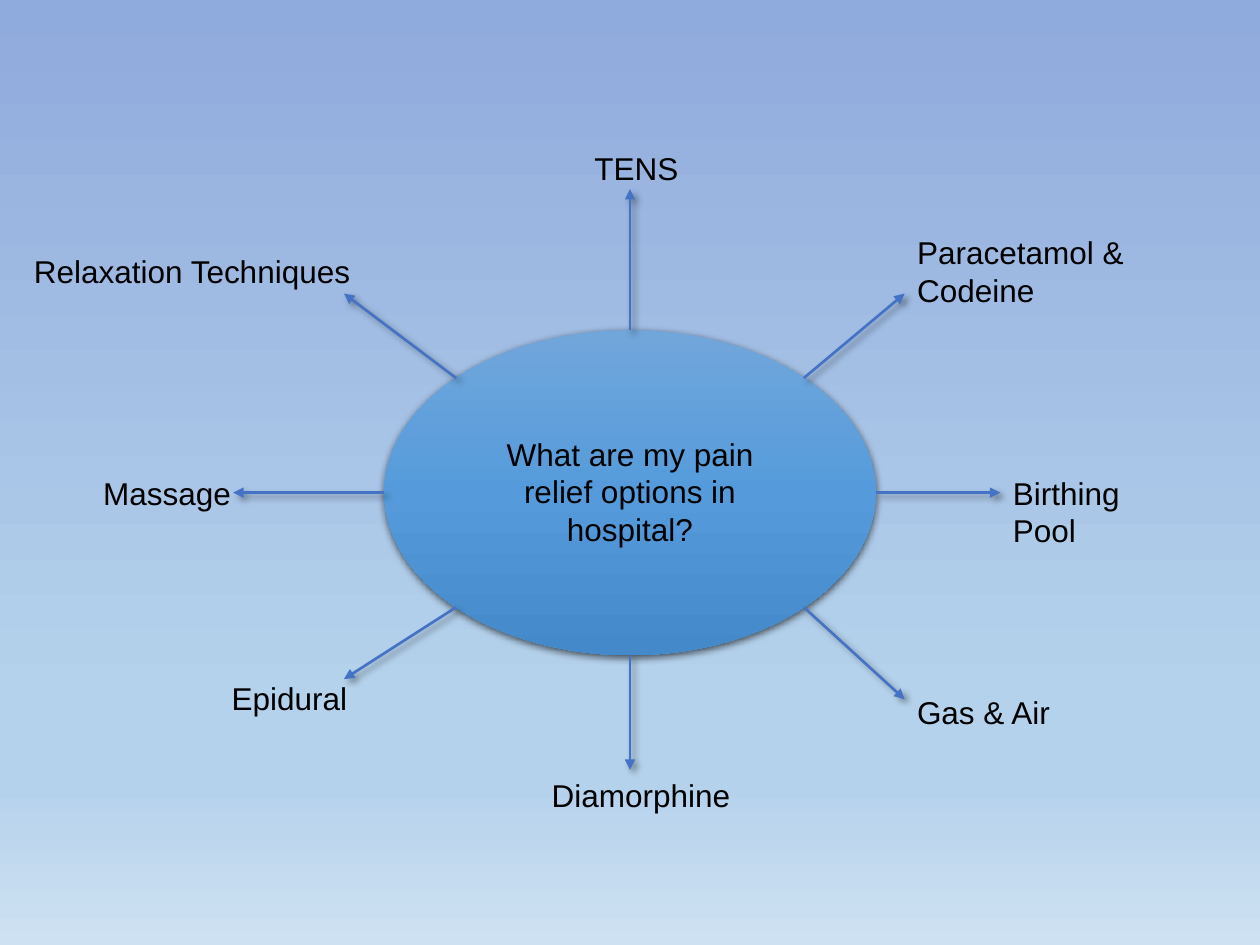
from lxml import etree
from pptx import Presentation
from pptx import util as u
from pptx.dml.color import RGBColor
from pptx.enum import shapes, text
from pptx.oxml.ns import qn

BLACK = RGBColor(0x00, 0x00, 0x00)
BLUE = RGBColor(0x44, 0x72, 0xC4)
SKY = [(0, RGBColor(0x8F, 0xAA, 0xDC)), (74, RGBColor(0xB5, 0xD2, 0xEC)),
       (83, RGBColor(0xB5, 0xD2, 0xEC)), (100, RGBColor(0xCE, 0xE1, 0xF2))]
HUB = [(0, RGBColor(0x71, 0xA6, 0xDB)), (50, RGBColor(0x55, 0x9B, 0xDB)),
       (100, RGBColor(0x44, 0x8A, 0xCA))]

WIDE, HIGH = 10, 7.5
LEFT, MID, RIGHT = 3.05, 5, 6.95      # columns of the ellipse
TOP, AXIS, BASE = 2.62, 3.91, 5.2     # rows of the ellipse
WEST, EAST = 3.62, 6.38               # its diagonal points
NORTH, SOUTH = 3, 4.82

# label, its left, top and width, then the arrow's start and tip
SPOKES = [
    ("TENS", (4.62, 1.13, 1.27), (MID, TOP), (MID, 1.5)),
    ("Paracetamol & Codeine", (7.18, 1.8, 2.61), (EAST, NORTH), (7.18, 2.33)),
    ("Birthing Pool", (7.94, 3.71, 1.55), (RIGHT, AXIS), (7.94, AXIS)),
    ("Gas & Air", (7.18, 5.45, 2.26), (EAST, SOUTH), (7.18, 5.55)),
    ("Diamorphine", (4.28, 6.11, 1.91), (MID, BASE), (MID, 6.11)),
    ("Epidural", (1.74, 5.34, 1.82), (WEST, SOUTH), (2.73, 5.39)),
    ("Massage", (0.72, 3.71, 1.22), (LEFT, AXIS), (1.85, AXIS)),
    ("Relaxation Techniques", (0.17, 1.95, 3.82), (WEST, NORTH), (2.73, 2.33)),
]


def inches(*sizes):
    return [u.Inches(size) for size in sizes]


def add_node(root, tag, **attrs):
    node = etree.SubElement(root, qn(tag))
    for name, value in attrs.items():
        node.set(name, str(value))
    return node


def shade(fill, root, stops):
    """Give a fill, held in the element root, a downward gradient."""
    fill.gradient()
    fill.gradient_angle = 270
    group = next(root.iter(qn("a:gsLst")))
    for old in list(group):
        group.remove(old)
    for share, color in stops:
        stop = add_node(group, "a:gs", pos=share * 1000)
        add_node(stop, "a:srgbClr", val=color)


def cast(item, alpha, blur, dist, angle):
    """Add an outer shadow: percent, points, points, degrees."""
    group = add_node(item.element.spPr, "a:effectLst")
    outer = add_node(group, "a:outerShdw", blurRad=u.Pt(blur), dist=u.Pt(dist),
                     dir=angle * 60000, algn="ctr", rotWithShape=0)
    color = add_node(outer, "a:srgbClr", val=BLACK)
    add_node(color, "a:alpha", val=alpha * 1000)


def add_hub(slide):
    hub = slide.shapes.add_shape(
        shapes.MSO_SHAPE.OVAL, *inches(LEFT, TOP, RIGHT - LEFT, BASE - TOP))
    shade(hub.fill, hub.element, HUB)
    hub.line.fill.background()
    cast(hub, 63, 4.5, 1.5, 90)


def add_arrow(slide, start, tip):
    arrow = slide.shapes.add_connector(
        shapes.MSO_CONNECTOR.STRAIGHT, *inches(*start, *tip))
    arrow.line.color.rgb = BLUE
    arrow.line.width = u.Pt(1.5)
    add_node(arrow.element.spPr.find(qn("a:ln")), "a:tailEnd", type="triangle")
    cast(arrow, 40, 4, 3, 45)


def add_label(slide, words, place, high=0.4, align=text.PP_ALIGN.LEFT):
    frame = slide.shapes.add_textbox(*inches(*place, high)).text_frame
    frame.word_wrap = True
    frame.auto_size = text.MSO_AUTO_SIZE.SHAPE_TO_FIT_TEXT
    frame.text = words
    line = frame.paragraphs[0]
    line.alignment = align
    font = line.runs[0].font
    font.name, font.size = "Arial", u.Pt(18)
    font.color.rgb = BLACK


def main():
    deck = Presentation()
    deck.slide_width, deck.slide_height = inches(WIDE, HIGH)
    slide = deck.slides.add_slide(deck.slide_layouts[6])
    shade(slide.background.fill, slide.element, SKY)
    add_hub(slide)
    add_label(slide, "What are my pain relief options in hospital?",
              (3.81, 3.4, 2.38), 1.01, text.PP_ALIGN.CENTER)
    for words, place, start, tip in SPOKES:
        add_arrow(slide, start, tip)
        high = 0.71 if words in ("Paracetamol & Codeine", "Birthing Pool") else 0.4
        add_label(slide, words, place, high)
    deck.save("out.pptx")


if __name__ == "__main__":
    main()
